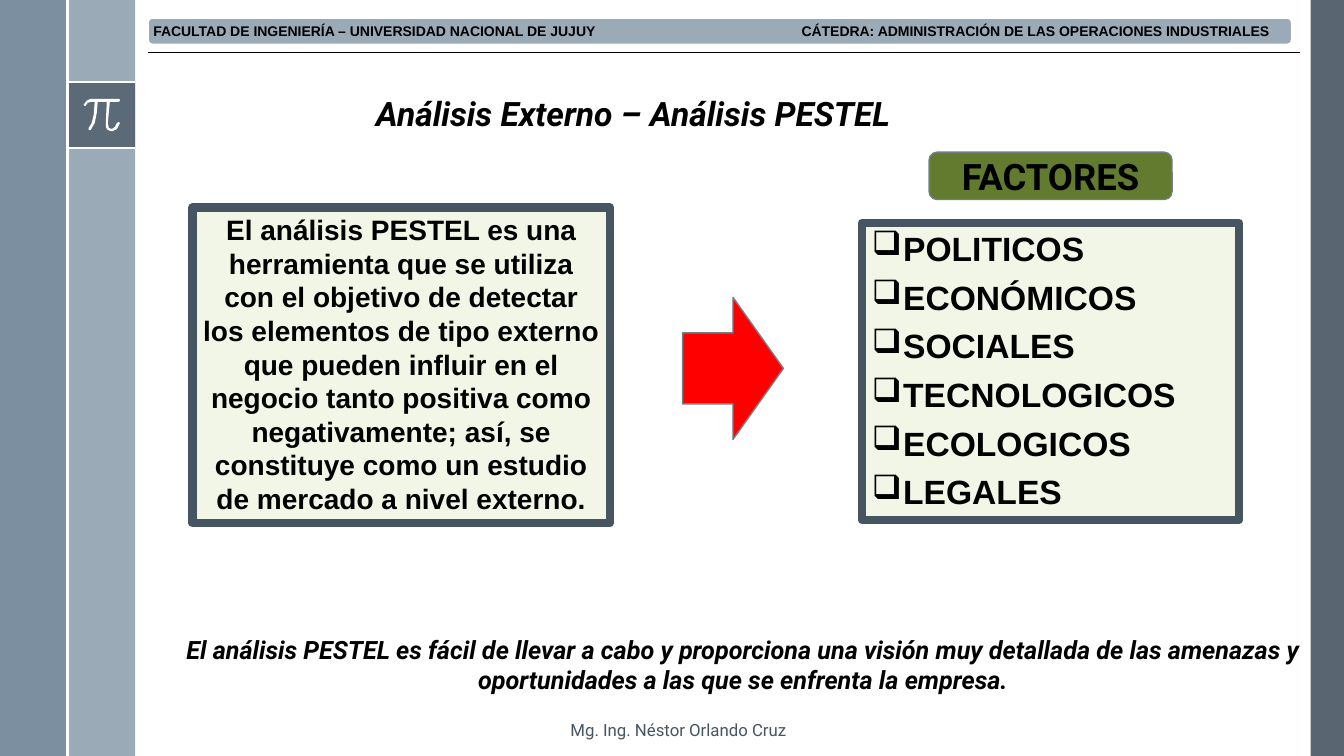
from dataclasses import dataclass
from lxml.etree import SubElement
from pptx import Presentation
from pptx.dml.color import RGBColor
from pptx.enum.shapes import MSO_CONNECTOR as Link, MSO_SHAPE as Form
from pptx.enum.text import MSO_ANCHOR as Anchor, PP_ALIGN as Align
from pptx.oxml.ns import qn
from pptx.util import Inches, Pt


@dataclass(frozen=True)
class Theme:
    ink: str = "000000"
    white: str = "FFFFFF"
    slate: str = "475562"
    frame: str = "465562"
    steel: str = "6A8093"
    mist: str = "9BAAB7"
    edge: str = "737E87"
    olive: str = "637B2E"
    cream: str = "F1F6E6"
    red: str = "FF0000"
    head: str = "Roboto"
    body: str = "Arial"
    tiny: int = 10
    small: int = 12
    note: int = 18
    text: int = 20
    title: int = 24
    label: int = 26


T = Theme()
FACTORS = ["POLITICOS", "ECONÓMICOS", "SOCIALES",
           "TECNOLOGICOS", "ECOLOGICOS", "LEGALES"]
SUMMARY = [
    "El análisis PESTEL es una herramienta que se utiliza con el objetivo de "
    "detectar los elementos de tipo externo que pueden influir en el negocio "
    "tanto positiva como negativamente; así, se",
    "constituye como un estudio de mercado a nivel externo.",
]
# Outline of the letter pi, in hundredths of an inch inside its badge
PI = [(51, 17), (23, 17), (19, 19), (16, 23), (17, 24), (18, 24), (20, 21),
      (23, 20), (27, 20), (26, 33), (24, 41), (21, 46), (21, 48), (23, 48),
      (27, 41), (29, 31), (30, 20), (39, 20), (38, 41), (38, 45), (40, 48),
      (43, 49), (45, 49), (49, 47), (52, 41), (51, 40), (49, 41), (47, 45),
      (44, 47), (41, 46), (40, 41), (42, 20), (51, 20), (52, 19), (52, 18)]


def emu(box):
    return [Inches(n) for n in box]


def paint(shape, fill, line=None, width=1, alpha=None):
    shape.shadow.inherit = False
    shape.fill.solid()
    shape.fill.fore_color.rgb = RGBColor.from_string(fill)
    if alpha:
        color = shape.fill._xPr.find(qn("a:solidFill"))[0]
        SubElement(color, qn("a:alpha"), val=str(alpha * 1000))
    if line:
        shape.line.color.rgb = RGBColor.from_string(line)
        shape.line.width = Pt(width)
    else:
        shape.line.fill.background()


def block(slide, box, fill, form=Form.RECTANGLE, **style):
    shape = slide.shapes.add_shape(form, *emu(box))
    paint(shape, fill, **style)
    return shape


def rule(slide, ends, color, width):
    line = slide.shapes.add_connector(Link.STRAIGHT, *emu(ends))
    line.line.color.rgb = RGBColor.from_string(color)
    line.line.width = Pt(width)
    SubElement(line._element.spPr, qn("a:effectLst"))


def write(shape, lines, size, font=T.head, color=T.ink, bold=True,
          italic=False, align=Align.LEFT, anchor=Anchor.TOP, before=0,
          inset=None, bullet=None, tab=None):
    frame = shape.text_frame
    frame.word_wrap = True
    frame.vertical_anchor = anchor
    if inset is not None:
        frame.margin_left = frame.margin_right = Inches(inset)
        frame.margin_top = frame.margin_bottom = Inches(inset)
    for i, line in enumerate(lines):
        para = frame.add_paragraph() if i else frame.paragraphs[0]
        para.alignment = align
        para.space_before = Pt(before)
        run = para.add_run()
        run.text = line
        run.font.size = Pt(size)
        run.font.name = font
        run.font.bold = bold
        run.font.italic = italic
        run.font.color.rgb = RGBColor.from_string(color)
        props = para._p.get_or_add_pPr()
        if bullet:
            props.set("marL", str(Inches(0.31)))
            props.set("indent", str(-Inches(0.31)))
            SubElement(props, qn("a:buChar"), char=bullet)
        if tab:
            stops = SubElement(props, qn("a:tabLst"))
            SubElement(stops, qn("a:tab"), pos=str(Inches(tab)), algn="l")


def label(slide, box, text, size, **style):
    write(slide.shapes.add_textbox(*emu(box)), [text], size, **style)


def badge(slide, box):
    x, y, w, h = box
    block(slide, box, T.slate, alpha=75)
    for level in (y, y + h):
        rule(slide, (x, level, x + w, level), T.white, 1.5)
    pen = slide.shapes.build_freeform(*PI[0], scale=Inches(0.01))
    pen.add_line_segments(PI[1:], close=True)
    paint(pen.convert_to_shape(Inches(x), Inches(y)), T.white)


def sides(slide, box):
    x, y, w, h = box
    band = 0.67
    block(slide, (x + w - 0.33, y, 0.33, h), T.slate, alpha=90)
    block(slide, (x + band, y, band, h), T.mist)
    block(slide, (x, y, band, h), T.steel, alpha=88)
    badge(slide, (x + band, y + 0.81, band, 0.66))
    rule(slide, (x + band, y, x + band, y + h), T.white, 1.5)


def header(slide, box):
    x, y, w, h = box
    block(slide, box, T.mist, Form.ROUNDED_RECTANGLE, line=T.white)
    label(slide, (x + 0.01, y + 0.01, w - 0.03, h - 0.02),
          "FACULTAD DE INGENIERÍA – UNIVERSIDAD NACIONAL DE JUJUY\t"
          "CÁTEDRA: ADMINISTRACIÓN DE LAS OPERACIONES INDUSTRIALES",
          T.tiny, font=T.body, anchor=Anchor.MIDDLE, inset=0.04, tab=6.43)
    rule(slide, (x, y + 0.34, x + 11.42, y + 0.34), T.ink, 0.5)


def panel(slide, box, lines, size, **style):
    shape = block(slide, box, T.cream, line=T.frame, width=6)
    write(shape, lines, size, font=T.body, **style)


def factors(slide, box):
    """Place the green heading and the list of factors below it."""
    x, y, w, h = box
    left = x + (w - 2.41) / 2
    block(slide, (left, y, 2.41, 0.47), T.olive,
          Form.ROUNDED_RECTANGLE, line=T.edge)
    label(slide, (left, y - 0.03, 2.41, 0.54), "FACTORES", T.label,
          align=Align.CENTER)
    panel(slide, (x, y + 0.7, w, h - 0.7), FACTORS, T.title,
          before=6, bullet="❑")


def main():
    deck = Presentation()
    deck.slide_width, deck.slide_height = Inches(13.33), Inches(7.5)
    slide = deck.slides.add_slide(deck.slide_layouts[6])
    sides(slide, (0, 0, 13.33, 7.5))
    header(slide, (1.47, 0.18, 11.34, 0.26))
    label(slide, (3.63, 0.87, 5.59, 0.5), "Análisis Externo – Análisis PESTEL",
          T.title, italic=True)
    panel(slide, (1.91, 2.06, 4.14, 3.13), SUMMARY, T.text,
          align=Align.CENTER)
    block(slide, (6.77, 2.95, 1, 1.41), T.red, Form.RIGHT_ARROW, line=T.edge)
    factors(slide, (8.55, 1.51, 3.74, 3.65))
    label(slide, (1.64, 6.24, 11.46, 0.71),
          "El análisis PESTEL es fácil de llevar a cabo y proporciona una "
          "visión muy detallada de las amenazas y oportunidades a las que se "
          "enfrenta la empresa.", T.note, italic=True, align=Align.CENTER)
    label(slide, (5.56, 7.09, 3.23, 0.3), "Mg. Ing. Néstor Orlando Cruz",
          T.small, color=T.frame, bold=False)
    deck.save("out.pptx")


if __name__ == "__main__":
    main()
